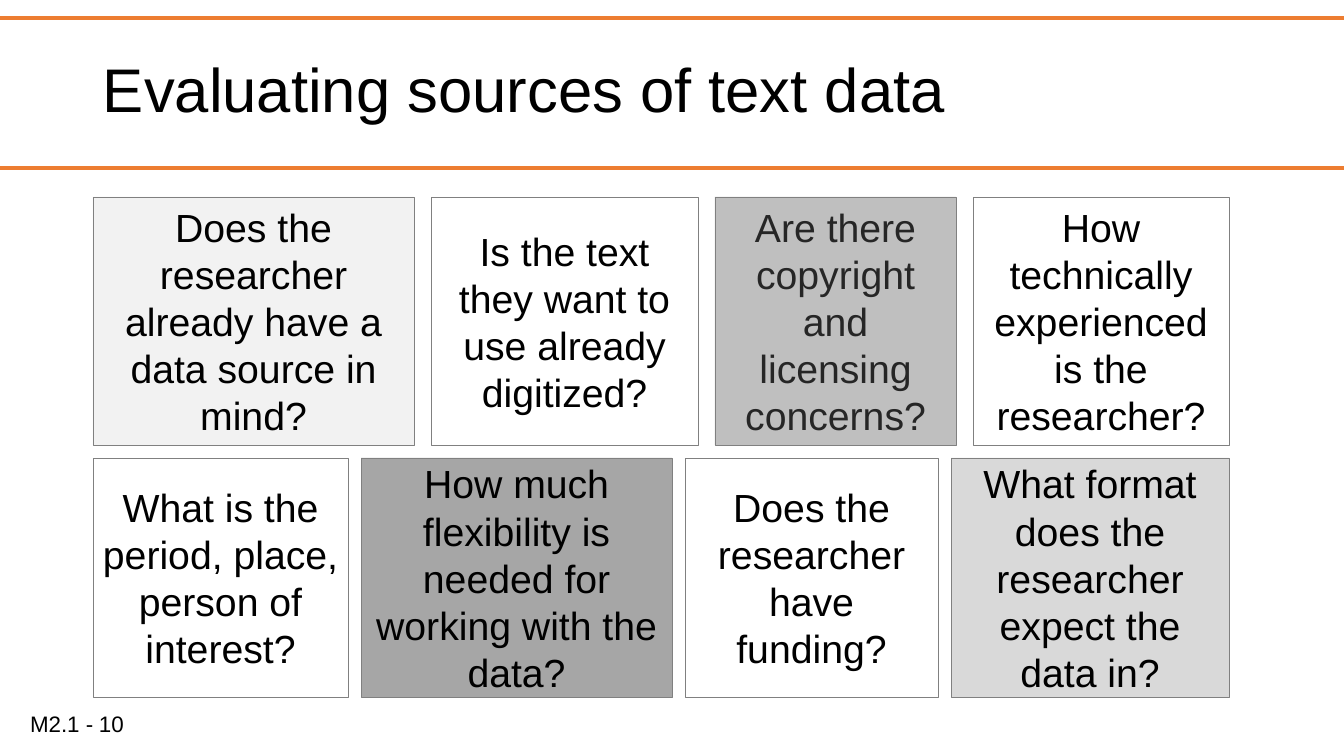
from pptx import Presentation
from pptx.dml.color import RGBColor
from pptx.enum.shapes import MSO_CONNECTOR, MSO_SHAPE
from pptx.enum.text import MSO_ANCHOR, PP_ALIGN
from pptx.oxml.ns import qn
from pptx.util import Pt
from lxml.etree import SubElement

# Content
TITLE = "Evaluating sources of text data"
MODULE, PAGE_NUMBER = "M2.1 -", "10"
RULE_TOPS = [18, 168]
# Each row: top, height, gap, then cards of (width, fill, text colour, question)
CARD_ROWS = [
    (197, 248, 17, [
        (321, "F2F2F2", "000000", "Does the researcher already have a data source in mind?"),
        (267, None, "000000", "Is the text they want to use already digitized?"),
        (241, "BFBFBF", "262626", "Are there copyright and licensing concerns?"),
        (256, None, "000000", "How technically experienced is the researcher?"),
    ]),
    (458, 239, 13, [
        (255, None, "000000", "What is the period, place, person of interest?"),
        (311, "A6A6A6", "000000", "How much flexibility is needed for working with the data?"),
        (253, None, "000000", "Does the researcher have funding?"),
        (278, "D9D9D9", "000000", "What format does the researcher expect the data in?"),
    ]),
]
WIDTH, HEIGHT, LEFT = 1344, 756, 93


def px(length):
    return round(length * 914400 / 100.8)


def colour(value):
    return RGBColor.from_string(value)


def write(shape, text, size, ink="000000", align=PP_ALIGN.LEFT,
          anchor=MSO_ANCHOR.MIDDLE, spacing=1.0, inset=10):
    frame = shape.text_frame
    frame.word_wrap = True
    frame.vertical_anchor = anchor
    frame.margin_left = frame.margin_right = px(inset)
    frame.margin_top = frame.margin_bottom = px(5)
    para = frame.paragraphs[0]
    para.alignment, para.line_spacing = align, spacing
    span = para.add_run()
    span.text = text
    span.font.name, span.font.size = "Arial", Pt(size)
    span.font.color.rgb = colour(ink)


deck = Presentation()
deck.slide_width, deck.slide_height = px(WIDTH), px(HEIGHT)
page = deck.slides.add_slide(deck.slide_layouts[5])

# Rules above and below the title
for top in RULE_TOPS:
    rule = page.shapes.add_connector(MSO_CONNECTOR.STRAIGHT, 0, px(top), px(WIDTH), px(top))
    rule.line.color.rgb, rule.line.width = colour("ED7D31"), Pt(2.25)
    SubElement(rule._element.spPr, qn("a:effectLst"))

# Title
title = page.shapes.title
title.left, title.top, title.width, title.height = px(LEFT), px(20), px(1159), px(146)
write(title, TITLE, 44, spacing=0.9)

# Question cards
for top, height, gap, cards in CARD_ROWS:
    left = LEFT
    for width, fill, ink, question in cards:
        card = page.shapes.add_shape(MSO_SHAPE.RECTANGLE, px(left), px(top), px(width), px(height))
        card.shadow.inherit = False
        if fill:
            card.fill.solid()
            card.fill.fore_color.rgb = colour(fill)
        else:
            card.fill.background()
        card.line.color.rgb, card.line.width = colour("808080"), Pt(0.5)
        write(card, question, 28, ink, align=PP_ALIGN.CENTER, inset=8)
        left += width + gap

# Module label and page number
module = page.shapes.add_textbox(px(20), px(705), px(99), px(37))
write(module, MODULE, 16, anchor=MSO_ANCHOR.TOP)
number = page.shapes.add_textbox(px(89), px(704), px(302), px(40))
write(number, PAGE_NUMBER, 16)

deck.save("out.pptx")
